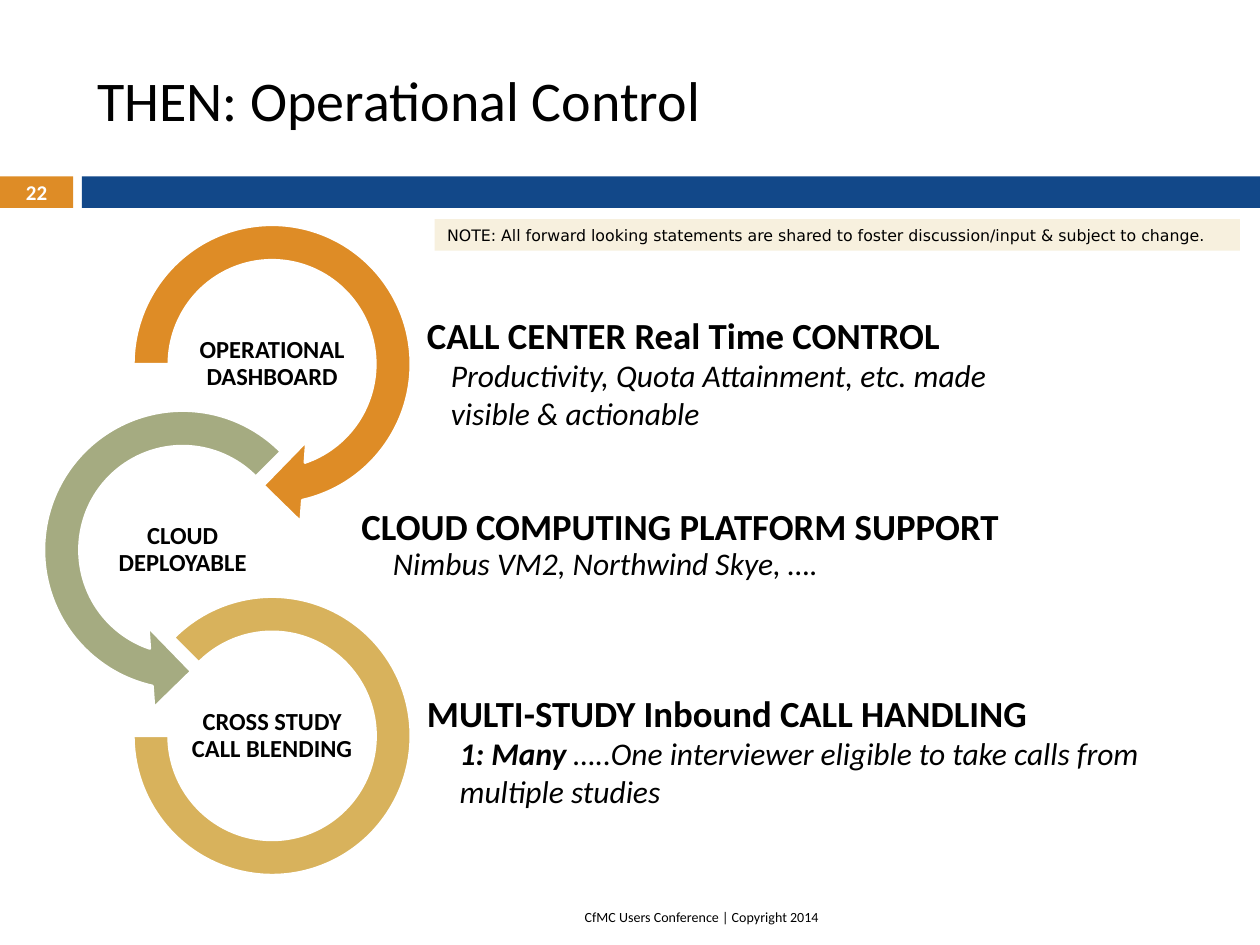
from dataclasses import dataclass

from pptx import Presentation
from pptx import util as u
from pptx.dml.color import RGBColor
from pptx.enum import shapes, text

ALIGN, ANCHOR, PRESET = text.PP_ALIGN, text.MSO_ANCHOR, shapes.MSO_SHAPE


@dataclass(frozen=True)
class Theme:
    font: str = "Calibri"
    note_font: str = "DejaVu Sans"
    ink: str = "000000"
    paper: str = "FFFFFF"
    orange: str = "DE8C26"
    blue: str = "124889"
    green: str = "A5AB81"
    gold: str = "D8B25C"
    cream: str = "F7F0DE"
    title: float = 32
    heading: float = 21
    detail: float = 18
    label: float = 14
    number: float = 12
    note: float = 9
    footer: float = 8


THEME = Theme()


@dataclass(frozen=True)
class Box:
    left: float
    top: float
    width: float
    height: float

    def inner(self, x, y, w, h):
        """Inner box, given in percent of this one."""
        return Box(self.left + self.width * x / 100, self.top + self.height * y / 100,
                   self.width * w / 100, self.height * h / 100)

    def centred(self, w, h):
        return self.inner((100 - w) / 2, (100 - h) / 2, w, h)

    def emu(self):
        return [u.Inches(v) for v in (self.left, self.top, self.width, self.height)]


PAGE = Box(0, 0, 10, 7.5)

# Preset, its size in percent of the stage box, its adjustments
DOWN_RIGHT = (PRESET.CIRCULAR_ARROW, 100, (0.11, 11.42, 45, 108, 0.125))
DOWN_LEFT = (PRESET.LEFT_CIRCULAR_ARROW, 100, (0.11, 11.42, 63, 189, 0.125))
END_ARC = (PRESET.BLOCK_ARC, 86, (135, 108, 0.127))

# Ring left, ring form, colour, label
STAGES = [
    (8.8, DOWN_RIGHT, THEME.orange, "OPERATIONAL DASHBOARD"),
    (1.7, DOWN_LEFT, THEME.green, "CLOUD DEPLOYABLE"),
    (8.8, END_ARC, THEME.gold, "CROSS STUDY CALL BLENDING"),
]

# Box in percent of the page, heading, detail indent, line spacing, detail runs (text, bold)
TOPICS = [
    ((32.9, 32.4, 53.2, 14.13), "CALL CENTER Real Time CONTROL", 0.19, 1.0,
     [("Productivity, Quota Attainment, etc. made visible & actionable", False)]),
    ((27.7, 52.67, 71.1, 9.73), "CLOUD COMPUTING PLATFORM SUPPORT", 0.25, 0.9,
     [("Nimbus VM2, Northwind Skye, ….", False)]),
    ((32.9, 72.4, 62, 14.13), "MULTI-STUDY Inbound CALL HANDLING", 0.26, 1.0,
     [("1: Many ", True),
      ("…..One interviewer eligible to take calls from multiple studies", False)]),
]


def style(paragraph, size, color=THEME.ink, font=THEME.font, bold=None, italic=None):
    face = paragraph.font
    face.name, face.size, face.bold, face.italic = font, u.Pt(size), bold, italic
    face.color.rgb = RGBColor.from_string(color)


def add_form(slide, box, preset, fill, outline=None):
    form = slide.shapes.add_shape(preset, *box.emu())
    form.shadow.inherit = False
    form.fill.solid()
    form.fill.fore_color.rgb = RGBColor.from_string(fill)
    if outline:
        form.line.color.rgb = RGBColor.from_string(outline)
        form.line.width = u.Pt(1.5)
    else:
        form.line.fill.background()
    return form


def add_text(slide, box, anchor=ANCHOR.TOP):
    frame = slide.shapes.add_textbox(*box.emu()).text_frame
    frame.word_wrap = True
    frame.vertical_anchor = anchor
    return frame


def add_line(slide, box, words, size, align, **look):
    frame = add_text(slide, box, ANCHOR.MIDDLE)
    line = frame.paragraphs[0]
    line.text, line.alignment = words, align
    style(line, size, **look)
    return frame


def add_header(slide, box):
    title = slide.shapes.title
    title.left, title.top, title.width, title.height = box.inner(6.7, 3.33, 89.2, 14.4).emu()
    title.text_frame.text = "THEN: Operational Control"
    title.text_frame.vertical_anchor = ANCHOR.MIDDLE
    heading = title.text_frame.paragraphs[0]
    heading.alignment = ALIGN.LEFT
    style(heading, THEME.title)

    # Number tab and band
    tab = box.inner(0, 18.67, 5.8, 3.33)
    add_form(slide, tab, PRESET.RECTANGLE, THEME.orange)
    add_form(slide, box.inner(6.5, 18.67, 93.5, 3.33), PRESET.RECTANGLE, THEME.blue)
    add_line(slide, tab, "22", THEME.number, ALIGN.CENTER, color=THEME.paper, bold=True)


def add_stage(slide, box, ring, color, label):
    preset, size, adjustments = ring
    form = add_form(slide, box.centred(size, size), preset, color, THEME.paper)
    for index, value in enumerate(adjustments):
        form.adjustments[index] = value

    frame = add_line(slide, box.centred(56, 28), label, THEME.label, ALIGN.CENTER, bold=True)
    frame.paragraphs[0].line_spacing = 0.9
    frame.margin_left = frame.margin_right = u.Inches(0.01)
    frame.margin_top = frame.margin_bottom = u.Inches(0.01)


def add_topic(slide, box, heading, indent, spacing, detail_runs):
    frame = add_text(slide, box)
    head = frame.paragraphs[0]
    head.text = heading
    style(head, THEME.heading, bold=True)

    detail = frame.add_paragraph()
    detail_format = detail._p.get_or_add_pPr()
    detail_format.set("marL", str(u.Inches(indent)))
    detail_format.set("indent", "0")
    detail.line_spacing = spacing
    style(detail, THEME.detail, italic=True)
    for words, bold in detail_runs:
        run = detail.add_run()
        run.text, run.font.bold = words, bold


def add_note(slide, box):
    frame = add_form(slide, box, PRESET.RECTANGLE, THEME.cream).text_frame
    frame.word_wrap = True
    frame.vertical_anchor = ANCHOR.TOP
    note = frame.paragraphs[0]
    note.text = ("NOTE: All forward looking statements are shared to foster "
                 "discussion/input & subject to change.")
    note.alignment = ALIGN.LEFT
    style(note, THEME.note, font=THEME.note_font)


def main():
    deck = Presentation()
    deck.slide_width, deck.slide_height = u.Inches(PAGE.width), u.Inches(PAGE.height)
    slide = deck.slides.add_slide(deck.slide_layouts[5])

    add_header(slide, PAGE)
    # Chain of rings, evenly stepped down the page
    for row, (left, ring, color, label) in enumerate(STAGES):
        add_stage(slide, PAGE.inner(left, 21.4 + 19.67 * row, 25.6, 34.27), ring, color, label)
    for place, *content in TOPICS:
        add_topic(slide, PAGE.inner(*place), *content)
    add_note(slide, PAGE.inner(34.5, 23.2, 63.9, 3.33))
    # Footer
    add_line(slide, PAGE.inner(6.7, 94.4, 59.3, 5.33), "CfMC Users Conference | Copyright 2014",
             THEME.footer, ALIGN.RIGHT)
    deck.save("out.pptx")


if __name__ == "__main__":
    main()
